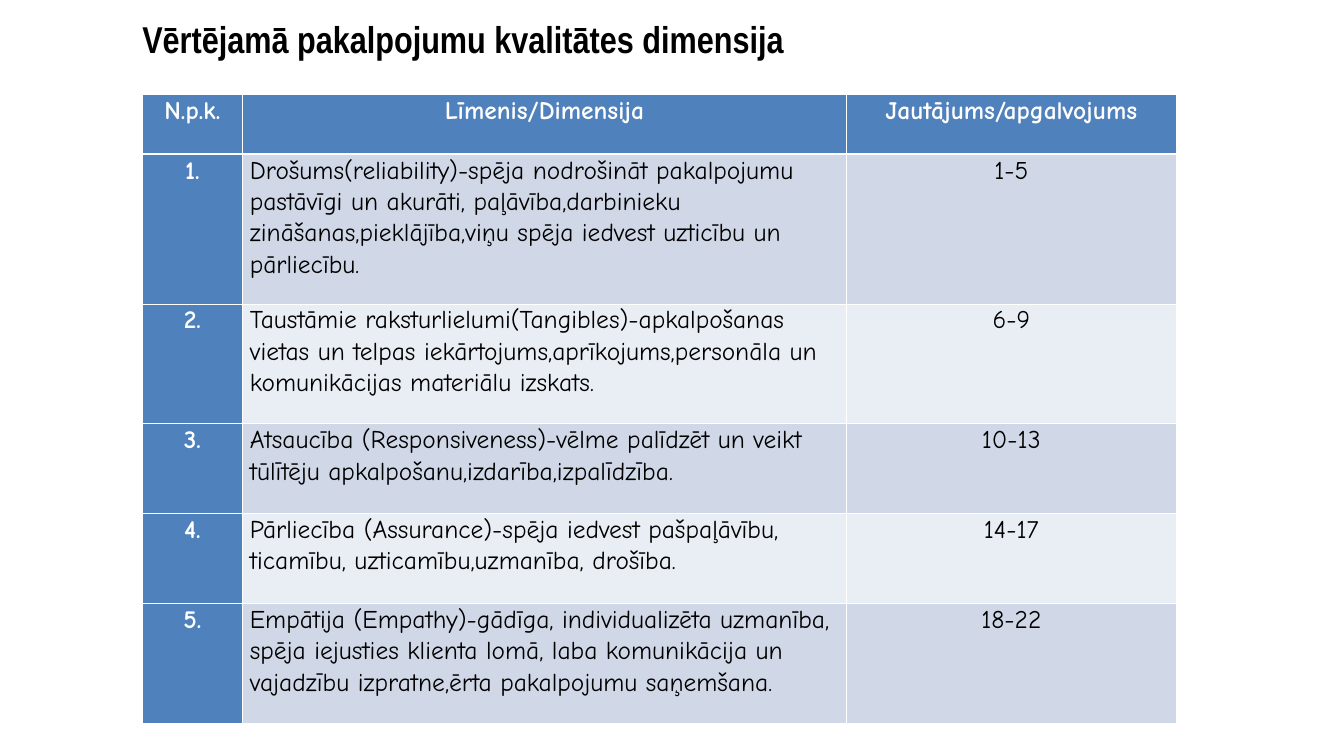
from dataclasses import dataclass

import pptx
import pptx.dml.color
import pptx.enum.text
import pptx.oxml
import pptx.oxml.ns
import pptx.util

ALIGN = pptx.enum.text.PP_ALIGN
ANCHOR = pptx.enum.text.MSO_ANCHOR


@dataclass(frozen=True)
class Theme:
    title_font: str = "Arial Narrow"
    body_font: str = "Comic Neue"
    title_size: int = 44
    body_size: int = 30
    ink: str = "000000"
    paper: str = "FFFFFF"
    accent: str = "4F81BD"
    bands: tuple = ("D0D8E8", "E9EDF4")


class SlideBuilder:
    """Places elements on a grid of 0.164 by 0.49 inch."""

    COLUMN, ROW = 0.164, 0.49

    def __init__(self, deck, theme):
        self.theme = theme
        self.slide = deck.slides.add_slide(deck.slide_layouts[5])

    def box(self, left, top, width, height):
        return (self.across(left), self.down(top),
                self.across(width), self.down(height))

    def across(self, columns):
        return pptx.util.Inches(columns * self.COLUMN)

    def down(self, rows):
        return pptx.util.Inches(rows * self.ROW)

    def style(self, paragraph, font, size, color, bold, align):
        paragraph.alignment = align
        for run in paragraph.runs:
            run.font.name = font
            run.font.size = pptx.util.Pt(size)
            run.font.bold = bold
            run.font.color.rgb = pptx.dml.color.RGBColor.from_string(color)

    def title(self, text, *place):
        heading = self.slide.shapes.title
        heading.left, heading.top, heading.width, heading.height = self.box(*place)
        frame = heading.text_frame
        frame.text = text
        frame.word_wrap = True
        frame.auto_size = pptx.enum.text.MSO_AUTO_SIZE.NONE
        frame.vertical_anchor = ANCHOR.TOP
        frame.margin_left = frame.margin_right = 0
        frame.margin_top = frame.margin_bottom = 0
        self.style(frame.paragraphs[0], self.theme.title_font,
                   self.theme.title_size, self.theme.ink, True, ALIGN.LEFT)

    def table(self, rows, left, top, widths, heights):
        place = self.box(left, top, sum(widths), sum(heights))
        table = self.slide.shapes.add_table(len(rows), len(widths), *place).table
        table.horz_banding = False
        for column, width in zip(table.columns, widths):
            column.width = self.across(width)
        for row, height in zip(table.rows, heights):
            row.height = self.down(height)
        for r, texts in enumerate(rows):
            for c, text in enumerate(texts):
                self.cell(table.cell(r, c), text, r, c)

    def cell(self, cell, text, r, c):
        theme = self.theme
        heading = r == 0 or c == 0
        cell.text = text
        cell.vertical_anchor = ANCHOR.TOP
        cell.margin_left = cell.margin_right = pptx.util.Inches(0.12)
        cell.margin_top = cell.margin_bottom = 0
        paragraph = cell.text_frame.paragraphs[0]
        paragraph.line_spacing = 1.07
        self.style(paragraph, theme.body_font, theme.body_size,
                   theme.paper if heading else theme.ink, heading,
                   ALIGN.LEFT if r and c == 1 else ALIGN.CENTER)
        # The rule under the header row is heavier
        self.borders(cell, top=3 if r == 1 else 1, bottom=3 if r == 0 else 1)
        cell.fill.solid()
        fill = theme.accent if heading else theme.bands[(r - 1) % 2]
        cell.fill.fore_color.rgb = pptx.dml.color.RGBColor.from_string(fill)

    def borders(self, cell, top, bottom):
        properties = cell._tc.get_or_add_tcPr()
        for side, points in (("L", 1), ("R", 1), ("T", top), ("B", bottom)):
            properties.append(pptx.oxml.parse_xml(
                f'<a:ln{side} {pptx.oxml.ns.nsdecls("a")} w="{pptx.util.Pt(points)}">'
                f'<a:solidFill><a:srgbClr val="{self.theme.paper}"/></a:solidFill>'
                f'</a:ln{side}>'))


HEADER = ("N.p.k.", "Līmenis/Dimensija", "Jautājums/apgalvojums")
DIMENSIONS = [
    ("Drošums(reliability)-spēja nodrošināt pakalpojumu pastāvīgi un akurāti, "
     "paļāvība,darbinieku zināšanas,pieklājība,viņu spēja iedvest uzticību un "
     "pārliecību.", "1-5"),
    ("Taustāmie raksturlielumi(Tangibles)-apkalpošanas vietas un telpas "
     "iekārtojums,aprīkojums,personāla un komunikācijas materiālu izskats.", "6-9"),
    ("Atsaucība (Responsiveness)-vēlme palīdzēt un veikt tūlītēju "
     "apkalpošanu,izdarība,izpalīdzība.", "10-13"),
    ("Pārliecība (Assurance)-spēja iedvest pašpaļāvību, ticamību, "
     "uzticamību,uzmanība, drošība.", "14-17"),
    ("Empātija (Empathy)-gādīga, individualizēta uzmanība, spēja iejusties "
     "klienta lomā, laba komunikācija un vajadzību izpratne,ērta pakalpojumu "
     "saņemšana.", "18-22"),
]


def main():
    deck = pptx.Presentation()
    deck.slide_width = pptx.util.Inches(21.99)
    deck.slide_height = pptx.util.Inches(12.37)
    quality = SlideBuilder(deck, Theme())

    # Title
    quality.title("Vērtējamā pakalpojumu kvalitātes dimensija",
                  14.2, 0.55, 118.5, 2.6)

    # Dimensions and the questions that measure them
    numbered = [(f"{number}.", dimension, questions)
                for number, (dimension, questions) in enumerate(DIMENSIONS, 1)]
    quality.table([HEADER, *numbered], left=14.2, top=3.15,
                  widths=(10, 60.25, 32.9), heights=(2, 5, 4, 3, 3, 4))

    deck.save("out.pptx")


if __name__ == "__main__":
    main()
